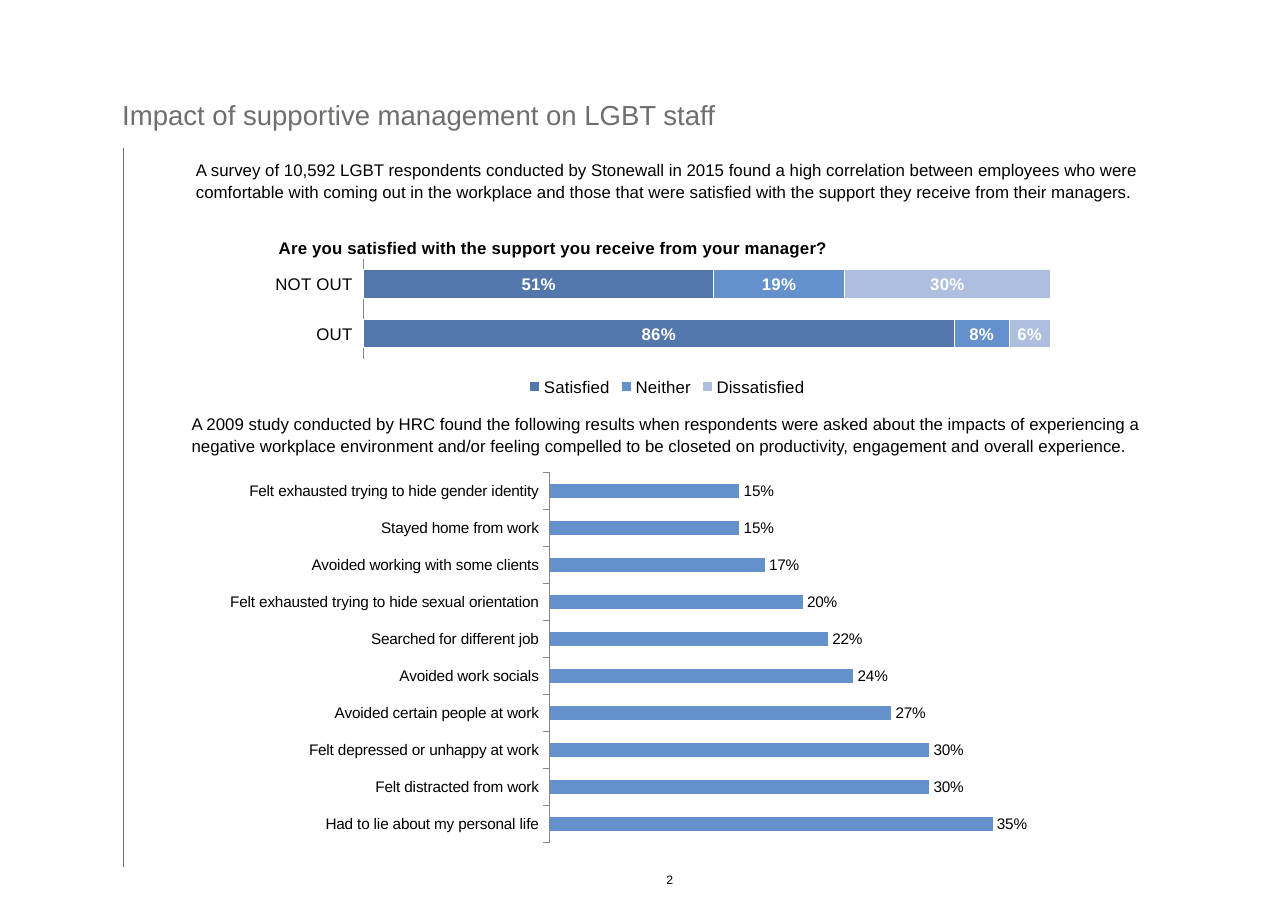
from dataclasses import dataclass

from lxml import etree
from pptx import Presentation
from pptx.chart.data import CategoryChartData
from pptx.dml.color import RGBColor
from pptx.enum.chart import XL_CHART_TYPE, XL_LABEL_POSITION, XL_LEGEND_POSITION, XL_TICK_LABEL_POSITION, XL_TICK_MARK
from pptx.enum.shapes import MSO_CONNECTOR
from pptx.enum.text import MSO_ANCHOR, PP_ALIGN
from pptx.oxml.ns import qn
from pptx.util import Inches, Pt

STACKED, CLUSTERED = XL_CHART_TYPE.BAR_STACKED_100, XL_CHART_TYPE.BAR_CLUSTERED
TICK_NONE, TICK_OUT = XL_TICK_MARK.NONE, XL_TICK_MARK.OUTSIDE
LABEL_CENTER, LABEL_END = XL_LABEL_POSITION.CENTER, XL_LABEL_POSITION.OUTSIDE_END
LABELS_LOW = XL_TICK_LABEL_POSITION.LOW
LEGEND_BOTTOM = XL_LEGEND_POSITION.BOTTOM
STRAIGHT = MSO_CONNECTOR.STRAIGHT
TOP, BOTTOM = MSO_ANCHOR.TOP, MSO_ANCHOR.BOTTOM
LEFT, CENTER = PP_ALIGN.LEFT, PP_ALIGN.CENTER


@dataclass(frozen=True)
class Theme:
    font: str = "Arial"
    black: RGBColor = RGBColor(0, 0, 0)
    white: RGBColor = RGBColor(255, 255, 255)
    gray: RGBColor = RGBColor(0x6D, 0x6E, 0x71)
    axis: RGBColor = RGBColor(0x86, 0x86, 0x86)
    dark_blue: RGBColor = RGBColor(0x53, 0x77, 0xAA)
    blue: RGBColor = RGBColor(0x64, 0x90, 0xCB)
    pale_blue: RGBColor = RGBColor(0xAE, 0xBE, 0xDE)
    title_size: float = 18
    body_size: float = 11
    chart_size: float = 10
    page_size: float = 8


THEME = Theme()

SURVEY = (
    "A survey of 10,592 LGBT respondents conducted by Stonewall in 2015 found a high correlation "
    "between employees who were comfortable with coming out in the workplace and those that were "
    "satisfied with the support they receive from their managers."
)
STUDY = (
    "A 2009 study conducted by HRC found the following results when respondents were asked about "
    "the impacts of experiencing a negative workplace environment and/or feeling compelled to be "
    "closeted on productivity, engagement and overall experience."
)
QUESTION = "Are you satisfied with the support you receive from your manager?"
SATISFACTION = {
    "Satisfied": (0.86, 0.51),
    "Neither": (0.08, 0.19),
    "Dissatisfied": (0.06, 0.30),
}
IMPACTS = {
    "Had to lie about my personal life": 0.35,
    "Felt distracted from work": 0.30,
    "Felt depressed or unhappy at work": 0.30,
    "Avoided certain people at work": 0.27,
    "Avoided work socials": 0.24,
    "Searched for different job": 0.22,
    "Felt exhausted trying to hide sexual orientation": 0.20,
    "Avoided working with some clients": 0.17,
    "Stayed home from work": 0.15,
    "Felt exhausted trying to hide gender identity": 0.15,
}


def style_font(font, size, color=THEME.black, bold=False):
    font.name, font.size, font.bold = THEME.font, Pt(size), bold
    font.color.rgb = color


def add_text(slide, box, text, size, color=THEME.black, insets=(0, 0, 0, 0),
             spacing=None, anchor=TOP, align=LEFT, wrap=True):
    frame = slide.shapes.add_textbox(*map(Inches, box)).text_frame
    frame.word_wrap, frame.vertical_anchor = wrap, anchor
    (frame.margin_left, frame.margin_top,
     frame.margin_right, frame.margin_bottom) = map(Inches, insets)
    frame.text = text
    paragraph = frame.paragraphs[0]
    paragraph.alignment, paragraph.line_spacing = align, spacing
    style_font(paragraph.runs[0].font, size, color)


def add_body(slide, box, text):
    add_text(slide, box, text, THEME.body_size, insets=(0.1, 0.04, 0.04, 0.04), spacing=1.1)


def add_margin_line(slide, x, top, bottom):
    line = slide.shapes.add_connector(STRAIGHT, Inches(x), Inches(top), Inches(x), Inches(bottom))
    line.line.color.rgb, line.line.width = THEME.gray, Pt(0.35)
    etree.SubElement(line._element.spPr, qn("a:effectLst"))


def set_layout(parent, index, **values):
    """Place a chart part by fractions of the chart's size."""
    for old in parent.findall(qn("c:layout")):
        parent.remove(old)
    layout = etree.Element(qn("c:layout"))
    manual = etree.SubElement(layout, qn("c:manualLayout"))
    for name, value in values.items():
        etree.SubElement(manual, qn(f"c:{name}")).set("val", str(value))
    parent.insert(index, layout)


def add_bar_chart(slide, box, kind, categories, series, colors, size, plot_box, maximum, gap, tick):
    data = CategoryChartData(number_format="0%")
    data.categories = categories
    for name, values in series.items():
        data.add_series(name, values)
    chart = slide.shapes.add_chart(kind, *map(Inches, box), data).chart
    style_font(chart.font, size)
    chart.has_title = chart.has_legend = False

    # Axes
    category_axis, value_axis = chart.category_axis, chart.value_axis
    category_axis.major_tick_mark = tick
    category_axis.tick_label_position = LABELS_LOW
    category_axis.format.line.color.rgb = THEME.axis
    value_axis.visible = value_axis.has_major_gridlines = False
    value_axis.minimum_scale, value_axis.maximum_scale = 0, maximum

    # Bars and their labels
    plot = chart.plots[0]
    plot.vary_by_categories, plot.gap_width = False, gap
    for item, color in zip(plot.series, colors):
        item.format.fill.solid()
        item.format.fill.fore_color.rgb = color
    plot.has_data_labels = True
    labels = plot.data_labels
    labels.show_value = True
    labels.number_format, labels.number_format_is_linked = "0%", False
    x, y, w, h = plot_box
    plot_area = chart._chartSpace.chart.plotArea
    set_layout(plot_area, 0, layoutTarget="inner", xMode="edge", yMode="edge", x=x, y=y, w=w, h=h)
    return chart


def add_satisfaction_chart(slide, box):
    chart = add_bar_chart(
        slide, box, STACKED, ("OUT", "NOT OUT"), SATISFACTION,
        (THEME.dark_blue, THEME.blue, THEME.pale_blue), THEME.body_size,
        (0.12, 0.23, 0.86, 0.54), 1, 75, TICK_NONE)
    plot = chart.plots[0]
    plot.overlap = 100
    plot.data_labels.position = LABEL_CENTER
    style_font(plot.data_labels.font, THEME.body_size, THEME.white, bold=True)
    for item in plot.series:
        item.format.line.color.rgb = THEME.white
        item.format.line.width = Pt(0.75)

    chart.has_title = True
    title = chart.chart_title
    title.text_frame.text = QUESTION
    style_font(title.text_frame.paragraphs[0].runs[0].font, THEME.body_size, bold=True)
    set_layout(title._element, 1, xMode="edge", yMode="edge", x=0.01, y=0.09)

    chart.has_legend = True
    chart.legend.position, chart.legend.include_in_layout = LEGEND_BOTTOM, False
    style_font(chart.legend.font, THEME.body_size)


def add_impact_chart(slide, box):
    chart = add_bar_chart(
        slide, box, CLUSTERED, list(IMPACTS), {"Series 1": list(IMPACTS.values())},
        (THEME.blue,), THEME.chart_size, (0.39, 0.02, 0.59, 0.96), 0.4, 150, TICK_OUT)
    labels = chart.plots[0].data_labels
    labels.position = LABEL_END
    style_font(labels.font, THEME.chart_size)


def build_slide(presentation):
    slide = presentation.slides.add_slide(presentation.slide_layouts[6])
    # Heading and margin line
    add_margin_line(slide, 1.12, 1.34, 7.87)
    add_text(slide, (1.11, 0.5, 9, 0.69), "Impact of supportive management on LGBT staff",
             THEME.title_size, THEME.gray, spacing=Pt(27.9), anchor=BOTTOM)
    # Manager support survey
    add_body(slide, (1.68, 1.39, 9, 0.67), SURVEY)
    add_satisfaction_chart(slide, (2.43, 1.97, 7.25, 1.67))
    # Workplace impact study
    add_body(slide, (1.64, 3.7, 8.8, 0.67), STUDY)
    add_impact_chart(slide, (1.95, 4.22, 7.79, 3.5))
    # Page number
    add_text(slide, (5.99, 7.92, 0.18, 0.14), "2", THEME.page_size, align=CENTER, wrap=False)


def main():
    presentation = Presentation()
    presentation.slide_width, presentation.slide_height = Inches(11.69), Inches(8.27)
    build_slide(presentation)
    presentation.save("out.pptx")


if __name__ == "__main__":
    main()
